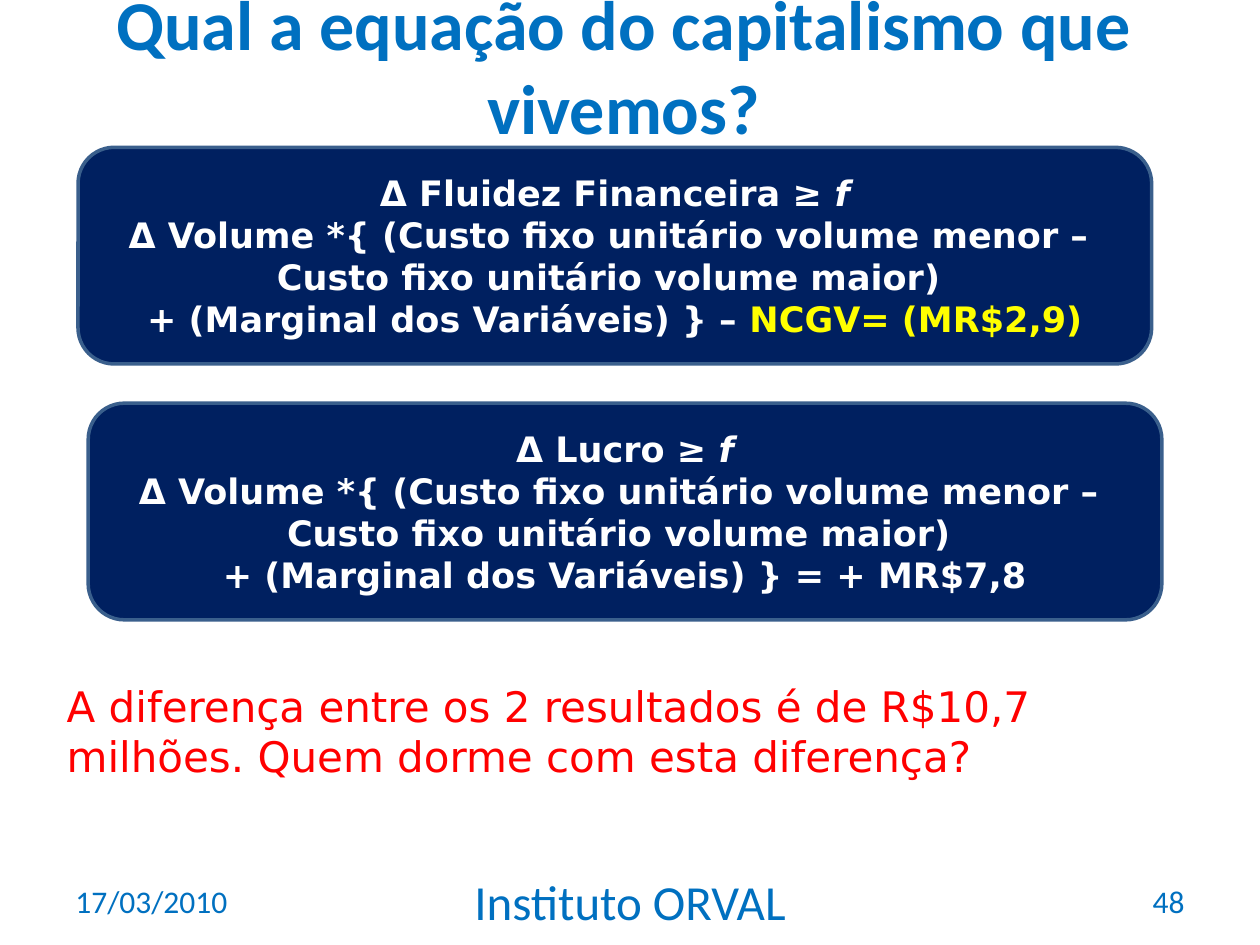
from dataclasses import dataclass

from pptx import Presentation
from pptx.dml.color import RGBColor
from pptx.enum.shapes import MSO_SHAPE
from pptx.enum.text import MSO_ANCHOR, PP_ALIGN
from pptx.util import Pt


@dataclass(frozen=True)
class Theme:
    blue: str = "0070C0"
    navy: str = "002060"
    border: str = "3A5F8C"
    white: str = "FFFFFF"
    yellow: str = "FFFF00"
    red: str = "FF0000"
    heading_font: str = "Calibri"
    body_font: str = "DejaVu Sans"
    title: int = 40
    institute: int = 28
    question: int = 24
    equation: int = 20
    footer: int = 18


theme = Theme()


def style(r, font, size, color, bold=False, italic=False):
    r.font.name = font
    r.font.size = Pt(size)
    r.font.color.rgb = RGBColor.from_string(color)
    r.font.bold = bold
    r.font.italic = italic


prs = Presentation()
prs.slide_width, prs.slide_height = Pt(720), Pt(540)
s = prs.slides.add_slide(prs.slide_layouts[6])

mid, top = MSO_ANCHOR.MIDDLE, MSO_ANCHOR.TOP
left, center, right = PP_ALIGN.LEFT, PP_ALIGN.CENTER, PP_ALIGN.RIGHT
texts = [
    ("Qual a equação do capitalismo que vivemos?", (32.4, -7.9, 648, 90),
     theme.heading_font, theme.title, theme.blue, True, center, mid),
    ("A diferença entre os 2 resultados é de R$10,7 milhões. Quem dorme com esta diferença?",
     (31, 385.2, 663, 64.8), theme.body_font, theme.question, theme.red, False, left, top),
    ("17/03/2010", (36, 500.5, 168, 28.75),
     theme.heading_font, theme.footer, theme.blue, False, left, mid),
    ("Instituto ORVAL", (246, 500.5, 228, 28.75),
     theme.heading_font, theme.institute, theme.blue, False, center, mid),
    ("48", (516, 500.5, 168, 28.75),
     theme.heading_font, theme.footer, theme.blue, False, right, mid),
]
for text, box, font, size, color, bold, align, anchor in texts:
    tf = s.shapes.add_textbox(*map(Pt, box)).text_frame
    tf.word_wrap = True
    tf.vertical_anchor = anchor
    tf.text = text
    p = tf.paragraphs[0]
    p.alignment = align
    style(p.runs[0], font, size, color, bold)

equations = [
    (50.4, 230.4, "Lucro", "= + MR$7,8", ""),
    (44.6, 84.2, "Fluidez Financeira", "– ", "NCGV= (MR$2,9)"),
]
for x, y, result, ending, highlight in equations:
    sp = s.shapes.add_shape(MSO_SHAPE.ROUNDED_RECTANGLE, Pt(x), Pt(y), Pt(613.5), Pt(123.8))
    sp.shadow.inherit = False
    sp.fill.solid()
    sp.fill.fore_color.rgb = RGBColor.from_string(theme.navy)
    sp.line.color.rgb = RGBColor.from_string(theme.border)
    sp.line.width = Pt(2)
    tf = sp.text_frame
    tf.word_wrap = True
    tf.vertical_anchor = mid
    tf.text = "\n".join([
        f"Δ {result} ≥ ",
        "Δ Volume *{ (Custo fixo unitário volume menor – ",
        "Custo fixo unitário volume maior) ",
        f"+ (Marginal dos Variáveis) }} {ending}",
    ])
    for p in tf.paragraphs:
        p.alignment = center
        style(p.runs[0], theme.body_font, theme.equation, theme.white, True)
    r = tf.paragraphs[0].add_run()
    r.text = "f"
    style(r, theme.body_font, theme.equation, theme.white, True, True)
    if highlight:
        r = tf.paragraphs[-1].add_run()
        r.text = highlight
        style(r, theme.body_font, theme.equation, theme.yellow, True)

prs.save("out.pptx")
